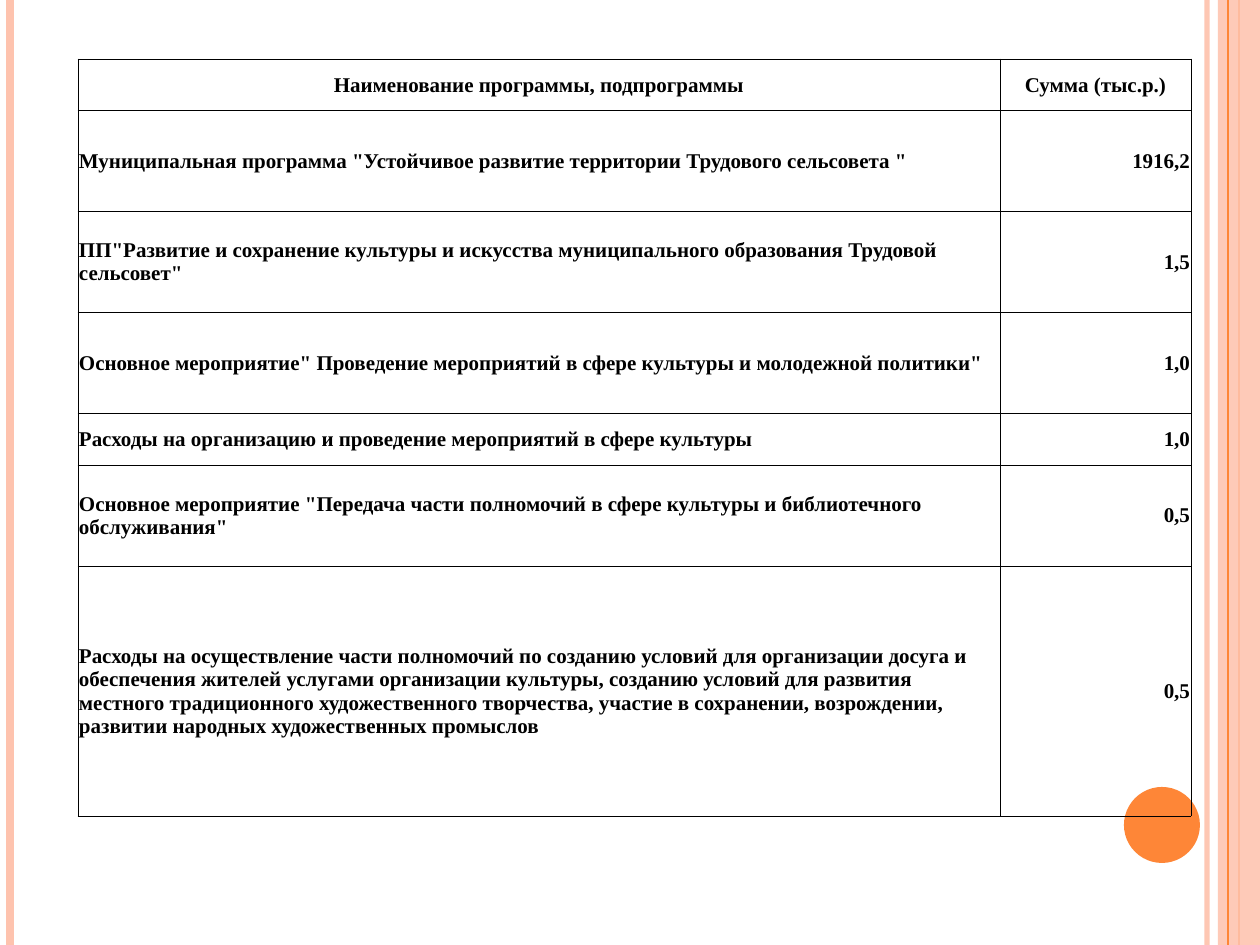
from lxml import etree
from pptx import Presentation
from pptx.dml.color import RGBColor
from pptx.enum.shapes import MSO_CONNECTOR, MSO_SHAPE
from pptx.enum.text import MSO_ANCHOR, PP_ALIGN
from pptx.oxml.ns import qn
from pptx.util import Emu, Pt

LINE, RECT, OVAL = MSO_CONNECTOR.STRAIGHT, MSO_SHAPE.RECTANGLE, MSO_SHAPE.OVAL
LEFT, CENTER, RIGHT = PP_ALIGN.LEFT, PP_ALIGN.CENTER, PP_ALIGN.RIGHT
MIDDLE = MSO_ANCHOR.MIDDLE

PX_PER_INCH = 126
SLIDE_W, SLIDE_H = 1260, 945
FONT = "Times New Roman"
BLACK, PEACH, ORANGE = "000000", "FEC3AE", "FE8637"

COL_WIDTHS = [922, 191]
ROW_HEIGHTS = [51, 101, 101, 101, 52, 101, 250]
ROWS = [
    ("Наименование программы, подпрограммы", "Сумма (тыс.р.)"),
    ('Муниципальная программа "Устойчивое развитие территории Трудового сельсовета "', "1916,2"),
    ('ПП"Развитие и сохранение культуры и искусства муниципального образования '
     'Трудовой сельсовет"', "1,5"),
    ('Основное мероприятие" Проведение мероприятий в сфере культуры и молодежной политики"', "1,0"),
    ("Расходы на организацию и проведение мероприятий в сфере культуры", "1,0"),
    ('Основное мероприятие "Передача части полномочий в сфере культуры и '
     'библиотечного обслуживания"', "0,5"),
    ("Расходы на осуществление части полномочий по созданию условий для организации досуга и "
     "обеспечения жителей услугами организации культуры, созданию условий для развития местного "
     "традиционного художественного творчества, участие в сохранении, возрождении, развитии "
     "народных художественных промыслов", "0,5"),
]


def px(n):
    return Emu(round(n * 914400 / PX_PER_INCH))


def rgb(value):
    return RGBColor.from_string(value)


def set_alpha(parent, percent):
    color = parent.find(".//" + qn("a:srgbClr"))
    etree.SubElement(color, qn("a:alpha"), val=str(percent * 1000))


def add_stripe(slide, x, top, height, color, width, alpha=None):
    line = slide.shapes.add_connector(LINE, px(x), px(top), px(x), px(top + height))
    line.line.color.rgb = rgb(color)
    line.line.width = Pt(width)
    sp_pr = line._element.spPr
    if alpha is not None:
        set_alpha(sp_pr, alpha)
    etree.SubElement(sp_pr, qn("a:effectLst"))


def add_block(slide, kind, x, y, w, h, color, alpha=None):
    sp = slide.shapes.add_shape(kind, px(x), px(y), px(w), px(h))
    sp.shadow.inherit = False
    sp.fill.solid()
    sp.fill.fore_color.rgb = rgb(color)
    sp.line.fill.background()
    if alpha is not None:
        set_alpha(sp._element.spPr, alpha)


def add_decor(slide, x, y, w, h):
    right = x + w
    add_stripe(slide, right - 53, y, h, PEACH, 3, 93)
    add_stripe(slide, x + 10, y, h, PEACH, 4.5)
    # This stripe shows faintly through the band above it
    add_stripe(slide, right - 21, y, h, ORANGE, 1.5)
    add_block(slide, RECT, right - 42, y, 42, h, PEACH, 87)
    add_stripe(slide, right - 32, y, h, ORANGE, 0.75)
    add_block(slide, OVAL, right - 136, y + h - 158, 76, 76, ORANGE)


def set_borders(cell, color, width):
    tc_pr = cell._tc.get_or_add_tcPr()
    for i, side in enumerate(("lnL", "lnR", "lnT", "lnB")):
        ln = etree.Element(qn("a:" + side), w=str(Pt(width)))
        fill = etree.SubElement(ln, qn("a:solidFill"))
        etree.SubElement(fill, qn("a:srgbClr"), val=color)
        tc_pr.insert(i, ln)


def format_cell(cell, text, align):
    cell.fill.background()
    set_borders(cell, BLACK, 0.5)
    cell.vertical_anchor = MIDDLE
    cell.margin_left = cell.margin_right = cell.margin_top = px(1)
    cell.margin_bottom = 0
    cell.text_frame.text = text
    p = cell.text_frame.paragraphs[0]
    p.alignment = align
    font = p.runs[0].font
    font.name, font.size, font.bold = FONT, Pt(12), True
    font.color.rgb = rgb(BLACK)


def add_budget_table(slide, x, y):
    frame = slide.shapes.add_table(len(ROWS), len(COL_WIDTHS), px(x), px(y),
                                   px(sum(COL_WIDTHS)), px(sum(ROW_HEIGHTS)))
    table = frame.table
    table.first_row = table.horz_banding = False
    for column, width in zip(table.columns, COL_WIDTHS):
        column.width = px(width)
    for r, (row, height) in enumerate(zip(table.rows, ROW_HEIGHTS)):
        row.height = px(height)
        aligns = (LEFT, RIGHT) if r else (CENTER, CENTER)
        for cell, text, align in zip(row.cells, ROWS[r], aligns):
            format_cell(cell, text, align)


def main():
    prs = Presentation()
    prs.slide_width, prs.slide_height = px(SLIDE_W), px(SLIDE_H)
    slide = prs.slides.add_slide(prs.slide_layouts[6])
    # Side stripes and circle
    add_decor(slide, 0, 0, SLIDE_W, SLIDE_H)
    # Programme amounts
    add_budget_table(slide, 78, 59)
    prs.save("out.pptx")


if __name__ == "__main__":
    main()
